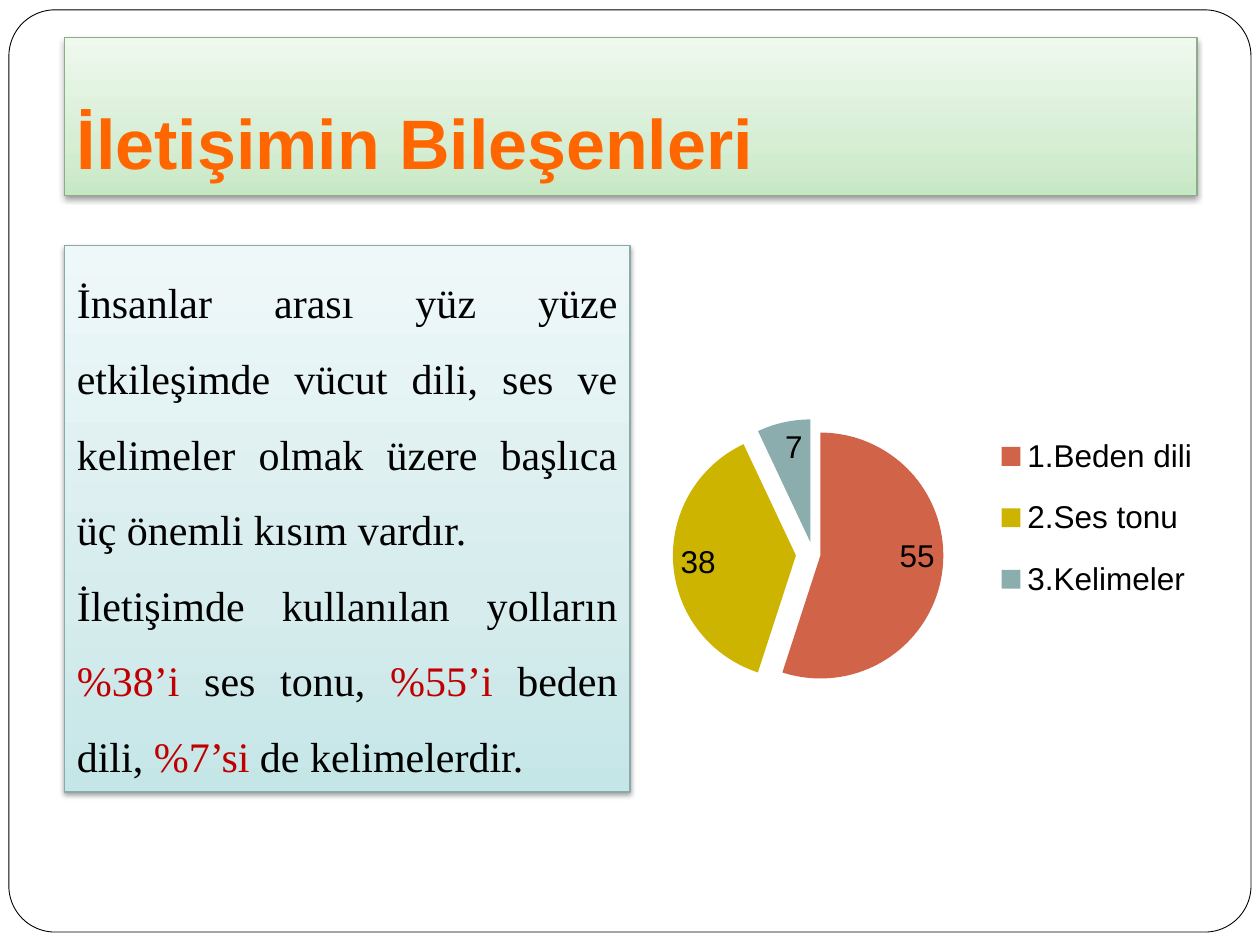
from lxml import etree
from pptx import Presentation
from pptx.chart.data import CategoryChartData
from pptx.dml.color import RGBColor
from pptx.enum.chart import XL_CHART_TYPE, XL_LABEL_POSITION, XL_LEGEND_POSITION
from pptx.enum.shapes import MSO_SHAPE
from pptx.enum.text import MSO_ANCHOR, MSO_AUTO_SIZE, PP_ALIGN
from pptx.oxml import parse_xml
from pptx.oxml.ns import nsdecls, qn
from pptx.util import Cm, Pt

PIE = XL_CHART_TYPE.PIE_EXPLODED
INSIDE_END = XL_LABEL_POSITION.INSIDE_END
LEGEND_RIGHT = XL_LEGEND_POSITION.RIGHT
RECTANGLE = MSO_SHAPE.RECTANGLE
ROUNDED_RECTANGLE = MSO_SHAPE.ROUNDED_RECTANGLE
TOP, BOTTOM = MSO_ANCHOR.TOP, MSO_ANCHOR.BOTTOM
FIT_SHAPE = MSO_AUTO_SIZE.SHAPE_TO_FIT_TEXT
LEFT, JUSTIFY = PP_ALIGN.LEFT, PP_ALIGN.JUSTIFY

TITLE = "İletişimin Bileşenleri"
BODY = [
    [("İnsanlar arası yüz yüze etkileşimde vücut dili, ses ve kelimeler "
      "olmak üzere başlıca üç önemli kısım vardır.", "text")],
    [("İletişimde kullanılan yolların ", "text"), ("%38’i ", "accent"),
     ("ses tonu, ", "text"), ("%55’i ", "accent"), ("beden dili, ", "text"),
     ("%7’si ", "accent"), ("de kelimelerdir.", "text")],
]
SLICES = [
    ("1.Beden dili", 55, "D16349", 6),
    ("2.Ses tonu", 38, "CCB400", 14),
    ("3.Kelimeler", 7, "8CADAE", 10),
]
SERIES_EXPLOSION = 32

THEME = {
    "text": "000000", "accent": "C00000", "title": "FF6600", "paper": "FFFFFF",
    "green": (["C7E8C4", "D7EED5", "EFF9EE"], "8BAD88"),
    "teal": (["C5E6E7", "D6ECED", "EFF8F9"], "88AAAB"),
    "stops": [0, 35, 100],
    "heading_font": "Arial", "body_font": "Times New Roman",
    "title_size": 40, "body_size": 24, "chart_size": 18,
}
BOXES = {
    "frame": (0.18, 0.2, 25.04, 18.59),
    "title": (1.3, 0.76, 22.83, 3.18),
    "chart": (12.7, 5.13, 11.99, 10.62),
    "body": (1.3, 4.95, 11.4, 11.02),
}
PLOT_LAYOUT = (0.035, 0.261, 0.546, 0.617)
LEGEND_LAYOUT = (0.61, 0.3, 0.35, 0.4)


def color(name):
    return RGBColor.from_string(THEME.get(name, name))


def box(name):
    return [Cm(value) for value in BOXES[name]]


def add_panel(slide, name, palette):
    shape = slide.shapes.add_shape(RECTANGLE, *box(name))
    tints, border = THEME[palette]
    shape.fill.gradient()
    shape.fill.gradient_angle = 90
    stop_list = shape._element.spPr.find(".//" + qn("a:gsLst"))
    for stop in list(stop_list):
        stop_list.remove(stop)
    for position, tint in zip(THEME["stops"], tints):
        stop = etree.SubElement(stop_list, qn("a:gs"), pos=str(position * 1000))
        etree.SubElement(stop, qn("a:srgbClr"), val=tint)
    shape.line.color.rgb = color(border)
    shape.line.width = Pt(0.75)
    shape.shadow.inherit = False
    effects = shape._element.spPr.find(qn("a:effectLst"))
    effects.append(parse_xml(
        f'<a:outerShdw {nsdecls("a")} blurRad="{Pt(3.1)}" dist="{Pt(1.6)}" '
        'dir="5400000" rotWithShape="0"><a:srgbClr val="000000">'
        '<a:alpha val="38000"/></a:srgbClr></a:outerShdw>'))
    shape.text_frame.word_wrap = True
    return shape


def style_run(run, font, size, color_name, bold=False):
    run.font.name = font
    run.font.size = Pt(size)
    run.font.bold = bold
    run.font.color.rgb = color(color_name)


def add_title(slide):
    frame = add_panel(slide, "title", "green").text_frame
    frame.vertical_anchor = BOTTOM
    frame.margin_bottom = Cm(0.25)
    frame.text = TITLE
    paragraph = frame.paragraphs[0]
    paragraph.alignment = LEFT
    style_run(paragraph.runs[0], THEME["heading_font"], THEME["title_size"], "title", True)


def add_body(slide):
    frame = add_panel(slide, "body", "teal").text_frame
    frame.vertical_anchor = TOP
    frame.auto_size = FIT_SHAPE
    for index, parts in enumerate(BODY):
        paragraph = frame.add_paragraph() if index else frame.paragraphs[0]
        paragraph.alignment = JUSTIFY
        paragraph.line_spacing = 1.5
        for text, color_name in parts:
            run = paragraph.add_run()
            run.text = text
            style_run(run, THEME["body_font"], THEME["body_size"], color_name)


def manual_layout(values, inner=False):
    target = '<c:layoutTarget val="inner"/>' if inner else ""
    modes = '<c:xMode val="edge"/><c:yMode val="edge"/>'
    sizes = "".join(f'<c:{key} val="{value}"/>' for key, value in zip("xywh", values))
    return parse_xml(f'<c:layout {nsdecls("c")}><c:manualLayout>{target}{modes}{sizes}'
                     '</c:manualLayout></c:layout>')


def explosion(amount):
    return parse_xml(f'<c:explosion {nsdecls("c")} val="{amount}"/>')


def add_pie(slide):
    data = CategoryChartData()
    data.categories = [label for label, *_ in SLICES]
    data.add_series("Series 1", [value for _, value, *_ in SLICES])
    chart = slide.shapes.add_chart(PIE, *box("chart"), data).chart
    chart.has_title = False
    chart.font.name = THEME["heading_font"]
    chart.font.size = Pt(THEME["chart_size"])
    chart.font.color.rgb = color("text")

    plot = chart.plots[0]
    plot.vary_by_categories = True
    plot.has_data_labels = True
    plot.data_labels.show_value = True
    plot.data_labels.show_percentage = False
    plot.data_labels.position = INSIDE_END

    series = plot.series[0]
    for old in list(series._element.iter(qn("c:explosion"))):
        old.getparent().remove(old)
    for index, (_, _, tint, offset) in enumerate(SLICES):
        fill = series.points[index].format.fill
        fill.solid()
        fill.fore_color.rgb = color(tint)
        point = series._element.findall(qn("c:dPt"))[index]
        point.find(qn("c:spPr")).addprevious(explosion(offset))
    series._element.find(qn("c:dPt")).addprevious(explosion(SERIES_EXPLOSION))

    chart.has_legend = True
    chart.legend.position = LEGEND_RIGHT
    chart.legend.include_in_layout = False
    legend = chart.legend._element
    plot_area = chart._chartSpace.find(".//" + qn("c:plotArea"))
    for parent in (legend, plot_area):
        for old in parent.findall(qn("c:layout")):
            parent.remove(old)
    legend.find(qn("c:legendPos")).addnext(manual_layout(LEGEND_LAYOUT))
    plot_area.insert(0, manual_layout(PLOT_LAYOUT, inner=True))


def add_frame(slide):
    shape = slide.shapes.add_shape(ROUNDED_RECTANGLE, *box("frame"))
    shape.adjustments[0] = 0.05
    shape.fill.solid()
    shape.fill.fore_color.rgb = color("paper")
    shape.line.color.rgb = color("text")
    shape.line.width = Pt(0.5)
    shape.shadow.inherit = False


def main():
    presentation = Presentation()
    presentation.slide_width, presentation.slide_height = Cm(25.4), Cm(19.05)
    slide = presentation.slides.add_slide(presentation.slide_layouts[6])
    add_frame(slide)
    add_title(slide)
    add_pie(slide)
    add_body(slide)
    presentation.save("out.pptx")


if __name__ == "__main__":
    main()
